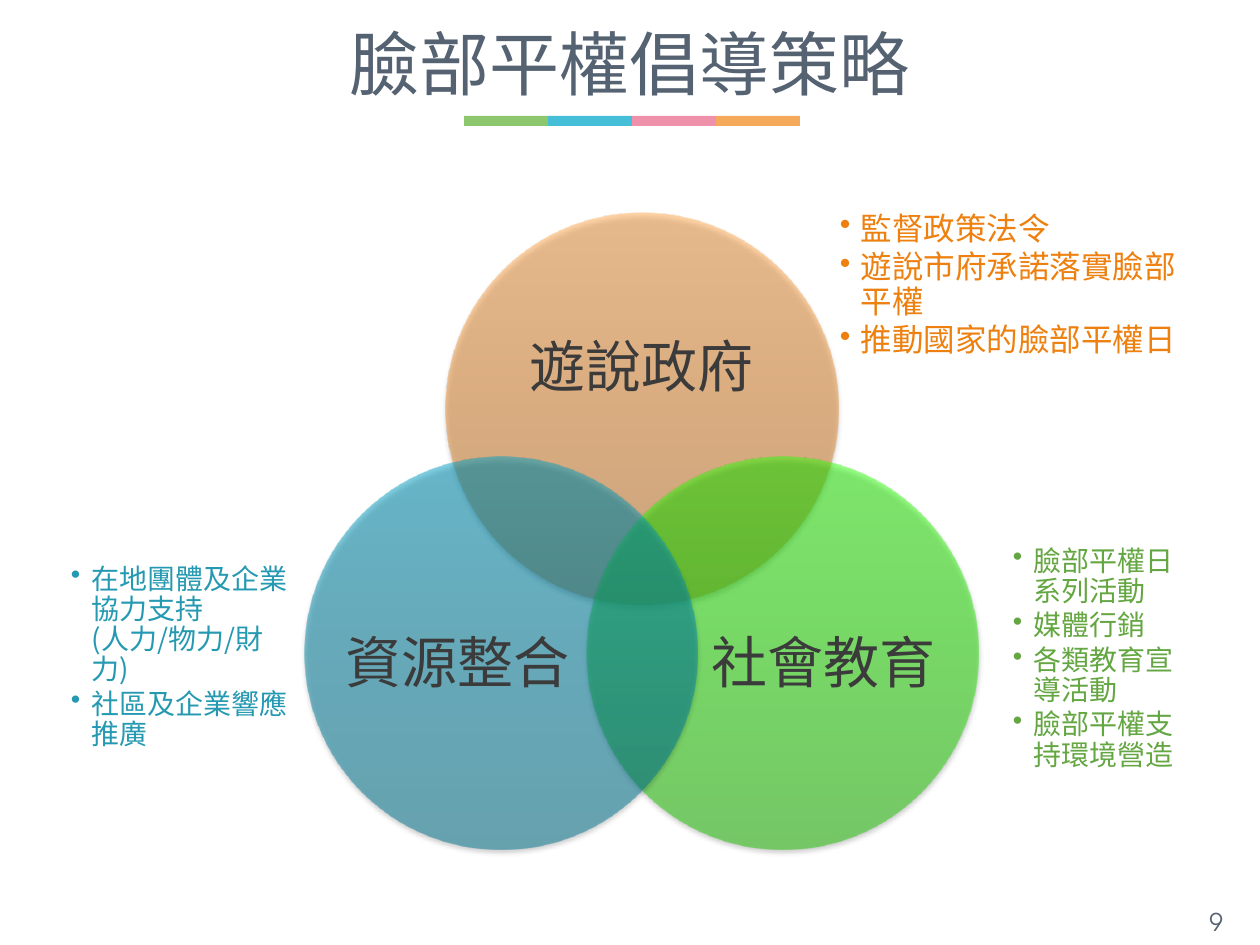
from lxml import etree
from pptx import Presentation
from pptx.dml.color import RGBColor
from pptx.enum.shapes import MSO_SHAPE
from pptx.enum.text import MSO_ANCHOR, PP_ALIGN
from pptx.oxml import parse_xml
from pptx.oxml.ns import nsdecls, qn
from pptx.util import Emu, Pt

RECTANGLE, OVAL = MSO_SHAPE.RECTANGLE, MSO_SHAPE.OVAL
TOP, MIDDLE = MSO_ANCHOR.TOP, MSO_ANCHOR.MIDDLE
LEFT, CENTER, RIGHT = PP_ALIGN.LEFT, PP_ALIGN.CENTER, PP_ALIGN.RIGHT
PX_PER_INCH = 126
CJK_FONT, NUMBER_FONT = "Noto Sans CJK SC", "TeX Gyre Adventor"
SLATE, CHARCOAL = "556272", "3B3B3B"


def px(length):
    return Emu(round(length * 914400 / PX_PER_INCH))


def color(value):
    return RGBColor.from_string(value)


class SlideBuilder:
    def __init__(self, presentation):
        self.slide = presentation.slides.add_slide(presentation.slide_layouts[5])

    def add_run(self, paragraph, text, size, fill, font=CJK_FONT):
        run = paragraph.add_run()
        run.text = text
        run.font.size = Pt(size)
        run.font.color.rgb = color(fill)
        run.font.name = font
        etree.SubElement(run._r.get_or_add_rPr(), qn("a:ea"), typeface=font)

    def frame(self, shape, inset, anchor):
        frame = shape.text_frame
        frame.word_wrap = True
        frame.vertical_anchor = anchor
        frame.margin_left = frame.margin_right = px(inset)
        frame.margin_top = frame.margin_bottom = px(inset)
        return frame

    def title(self, text, box):
        shape = self.slide.shapes.title
        shape.left, shape.top, shape.width, shape.height = map(px, box)
        paragraph = self.frame(shape, 6, MIDDLE).paragraphs[0]
        paragraph.alignment = CENTER
        self.add_run(paragraph, text, 40, SLATE)

    def label(self, text, box, size, fill, font=CJK_FONT, inset=0,
              anchor=MIDDLE, align=CENTER):
        shape = self.slide.shapes.add_textbox(*map(px, box))
        paragraph = self.frame(shape, inset, anchor).paragraphs[0]
        paragraph.alignment = align
        paragraph.line_spacing = 0.9
        self.add_run(paragraph, text, size, fill, font)

    def bullets(self, items, box, size, fill, inset):
        """Add a bulleted list; a newline in an item becomes a line break."""
        shape = self.slide.shapes.add_textbox(*map(px, box))
        frame = self.frame(shape, inset, TOP)
        for index, item in enumerate(items):
            paragraph = frame.add_paragraph() if index else frame.paragraphs[0]
            properties = paragraph._p.get_or_add_pPr()
            properties.set("marL", str(px(21)))
            properties.set("indent", str(-px(21)))
            etree.SubElement(properties, qn("a:buChar"), char="•")
            paragraph.alignment = LEFT
            paragraph.line_spacing = 0.9
            paragraph.space_after = Pt(size * 0.15)
            for line_index, line in enumerate(item.split("\n")):
                if line_index:
                    paragraph.add_line_break()
                self.add_run(paragraph, line, size, fill)

    def bar(self, box, fill):
        shape = self.slide.shapes.add_shape(RECTANGLE, *map(px, box))
        shape.shadow.inherit = False
        shape.fill.solid()
        shape.fill.fore_color.rgb = color(fill)
        shape.line.fill.background()

    def circle(self, left, top, diameter, shades):
        """Add a half-transparent circle, shaded from bottom to top."""
        shape = self.slide.shapes.add_shape(
            OVAL, px(left), px(top), px(diameter), px(diameter))
        shape.line.fill.background()
        stops = "".join(
            f'<a:gs pos="{position}"><a:srgbClr val="{shade}">'
            '<a:alpha val="50000"/></a:srgbClr></a:gs>'
            for position, shade in zip((0, 55000, 100000), shades))
        properties = shape._element.spPr
        properties.find(qn("a:prstGeom")).addnext(parse_xml(
            f'<a:gradFill {nsdecls("a")} rotWithShape="1"><a:gsLst>{stops}</a:gsLst>'
            '<a:lin ang="16200000" scaled="0"/></a:gradFill>'))
        properties.append(parse_xml(
            f'<a:effectLst {nsdecls("a")}><a:outerShdw blurRad="{Pt(3.1)}" '
            f'dist="{Pt(2)}" dir="5400000" rotWithShape="0"><a:srgbClr val="000000">'
            '<a:alpha val="38000"/></a:srgbClr></a:outerShdw></a:effectLst>'))


def main():
    presentation = Presentation()
    presentation.slide_width, presentation.slide_height = px(1260), px(945)
    builder = SlideBuilder(presentation)

    for index, fill in enumerate(("8CC66D", "45BFD8", "EF91AA", "F5A95A")):
        builder.bar((464 + 84 * index, 116, 84, 10), fill)

    builder.title("臉部平權倡導策略", (64, 10, 1131, 105))

    lists = [
        (["臉部平權日系列活動", "媒體行銷", "各類教育宣導活動", "臉部平權支持環境營造"],
         (985, 519, 243, 307), 16, "64A641", 28),
        (["在地團體及企業協力支持\n(人力/物力/財力)", "社區及企業響應推廣"],
         (43, 537, 284, 226), 16, "2599B1", 28),
        (["監督政策法令", "遊說市府承諾落實臉部平權", "推動國家的臉部平權日"],
         (808, 181, 410, 295), 18, "ED800E", 32),
    ]
    for items, box, size, fill, inset in lists:
        builder.bullets(items, box, size, fill, inset)

    center_x, top, diameter = 642, 213, 392
    circles = [
        (0, 0, ("C67B2C", "E99034", "FFA84D"), "遊說政府", (498, 281, 287, 176)),
        (141, 244, ("1DC200", "22E400", "2FFF0A"), "社會教育", (707, 558, 234, 215)),
        (-141, 244, ("007591", "0089AA", "00A0C6"), "資源整合", (341, 558, 234, 215)),
    ]
    for shift_x, shift_y, shades, text, label_box in circles:
        left = center_x - diameter // 2 + shift_x
        builder.circle(left, top + shift_y, diameter, shades)
        builder.label(text, label_box, 32, CHARCOAL)

    builder.label("9", (1134, 898, 101, 50), 14, SLATE, NUMBER_FONT,
                  inset=12, anchor=TOP, align=RIGHT)
    presentation.save("out.pptx")


if __name__ == "__main__":
    main()
